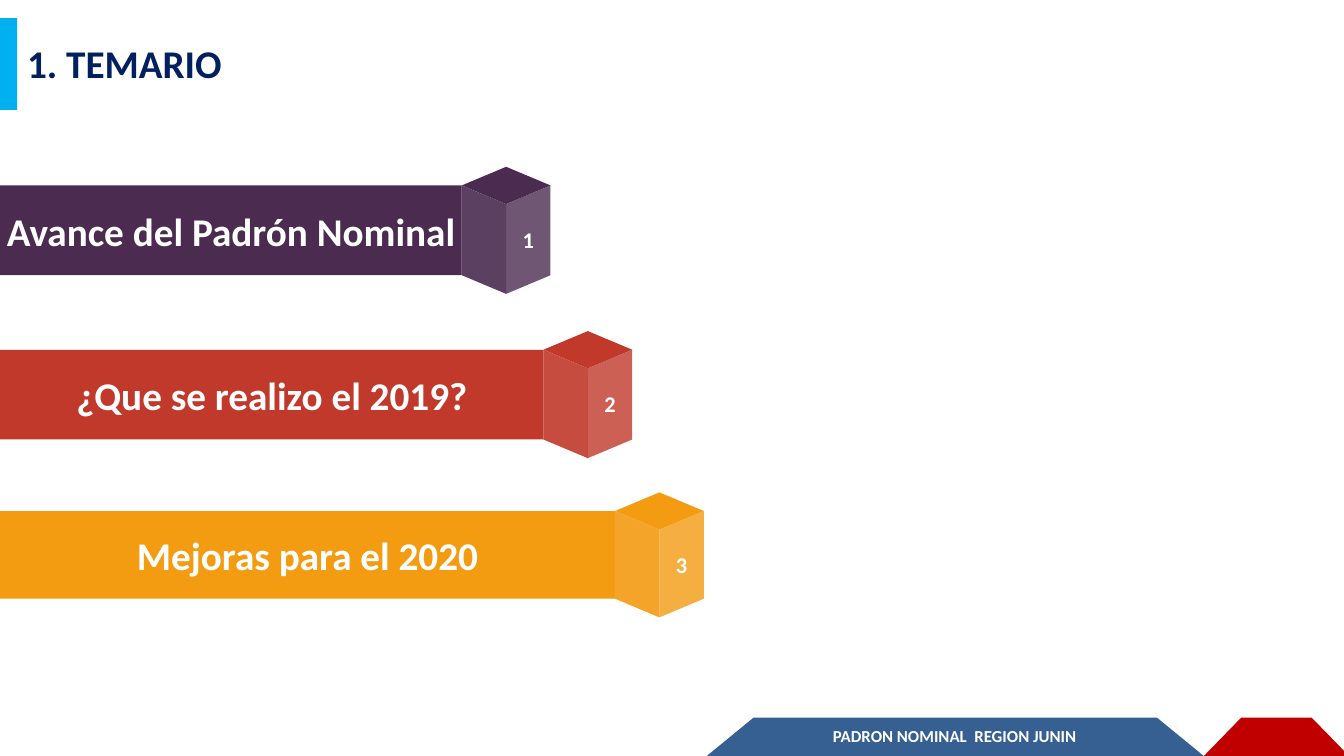
"""Agenda slide: three coloured bars ending in numbered cubes, with a title and a footer."""
from lxml import etree
from pptx import Presentation
from pptx.dml.color import RGBColor
from pptx.enum.shapes import MSO_SHAPE
from pptx.enum.text import MSO_ANCHOR, PP_ALIGN
from pptx.oxml.ns import qn
from pptx.util import Inches, Pt

RECTANGLE, TRAPEZOID = MSO_SHAPE.RECTANGLE, MSO_SHAPE.TRAPEZOID
MIDDLE, TOP = MSO_ANCHOR.MIDDLE, MSO_ANCHOR.TOP
CENTER, LEFT = PP_ALIGN.CENTER, PP_ALIGN.LEFT

WHITE = RGBColor(0xFF, 0xFF, 0xFF)
NAVY = RGBColor(0x00, 0x20, 0x60)
SKY = RGBColor(0x00, 0xB0, 0xF0)
BLUE = RGBColor(0x37, 0x60, 0x92)
RED = RGBColor(0xC0, 0x00, 0x00)
PURPLE = RGBColor(0x4B, 0x2C, 0x50)
BRICK = RGBColor(0xC0, 0x39, 0x2B)
ORANGE = RGBColor(0xF3, 0x9C, 0x12)

FACE_WIDTH = 0.44
SLANT = 0.185


def paint(shape, color, opacity=100):
    """Give a shape a plain fill without line or shadow."""
    shape.shadow.inherit = False
    shape.line.fill.background()
    shape.fill.solid()
    shape.fill.fore_color.rgb = color
    if opacity < 100:
        color_element = shape.fill._xPr.find(qn("a:solidFill"))[0]
        etree.SubElement(color_element, qn("a:alpha"), val=str(opacity * 1000))


def write(shape, text, size, color=WHITE, alignment=CENTER, anchor=MIDDLE, inset=0.05):
    """Put one bold run into a shape."""
    frame = shape.text_frame
    frame.word_wrap = True
    frame.vertical_anchor = anchor
    frame.margin_left = frame.margin_right = Inches(inset)
    frame.margin_top = frame.margin_bottom = Inches(0.05)
    paragraph = frame.paragraphs[0]
    paragraph.alignment = alignment
    run = paragraph.add_run()
    run.text = text
    run.font.name = "Calibri"
    run.font.size = Pt(size)
    run.font.bold = True
    run.font.color.rgb = color


presentation = Presentation()
presentation.slide_width = Inches(13.33)
presentation.slide_height = Inches(7.5)
slide = presentation.slides.add_slide(presentation.slide_layouts[6])
shapes = slide.shapes

for left, width, adjustment, color in [(7.01, 4.93, 1.22, BLUE), (11.94, 1.44, 0.975, RED)]:
    footer = shapes.add_shape(TRAPEZOID, Inches(left), Inches(7.12), Inches(width), Inches(0.38))
    footer.adjustments[0] = adjustment
    paint(footer, color)

footer_text = shapes.add_textbox(Inches(7.22), Inches(7.1), Inches(4.5), Inches(0.4))
write(footer_text, "PADRON NOMINAL  REGION JUNIN", 12, inset=0.1)

topics = [
    ("Avance del Padrón Nominal", 1.84, 4.58, 0.89, PURPLE),
    ("¿Que se realizo el 2019?", 3.47, 5.39, 0.89, BRICK),
    ("Mejoras para el 2020", 5.07, 6.1, 0.87, ORANGE),
]
for number, (topic, top, width, height, color) in enumerate(topics, start=1):
    bar = shapes.add_shape(RECTANGLE, 0, Inches(top), Inches(width), Inches(height))
    paint(bar, color)
    write(bar, topic, 28)

    middle, right, bottom = width + FACE_WIDTH, width + 2 * FACE_WIDTH, top + height
    left_face = [(middle, bottom + SLANT), (width, bottom), (width, top), (middle, top + SLANT)]
    right_face = [(middle, bottom + SLANT), (right, bottom), (right, top), (middle, top + SLANT)]
    lid = [(middle, top + SLANT), (right, top), (middle, top - SLANT), (width, top)]
    for points, opacity, label in [(left_face, 90, ""), (right_face, 80, str(number)), (lid, 100, "")]:
        corners = [(Inches(x), Inches(y)) for x, y in points]
        builder = shapes.build_freeform(*corners[0])
        builder.add_line_segments(corners[1:], close=True)
        face = builder.convert_to_shape()
        paint(face, color, opacity)
        if label:
            write(face, label, 16)

accent = shapes.add_shape(RECTANGLE, 0, Inches(0.18), Inches(0.17), Inches(0.91))
paint(accent, SKY)
title = shapes.add_textbox(Inches(0.17), Inches(0.34), Inches(9.71), Inches(0.57))
write(title, "1. TEMARIO", 28, NAVY, LEFT, TOP, inset=0.1)

presentation.save("out.pptx")
